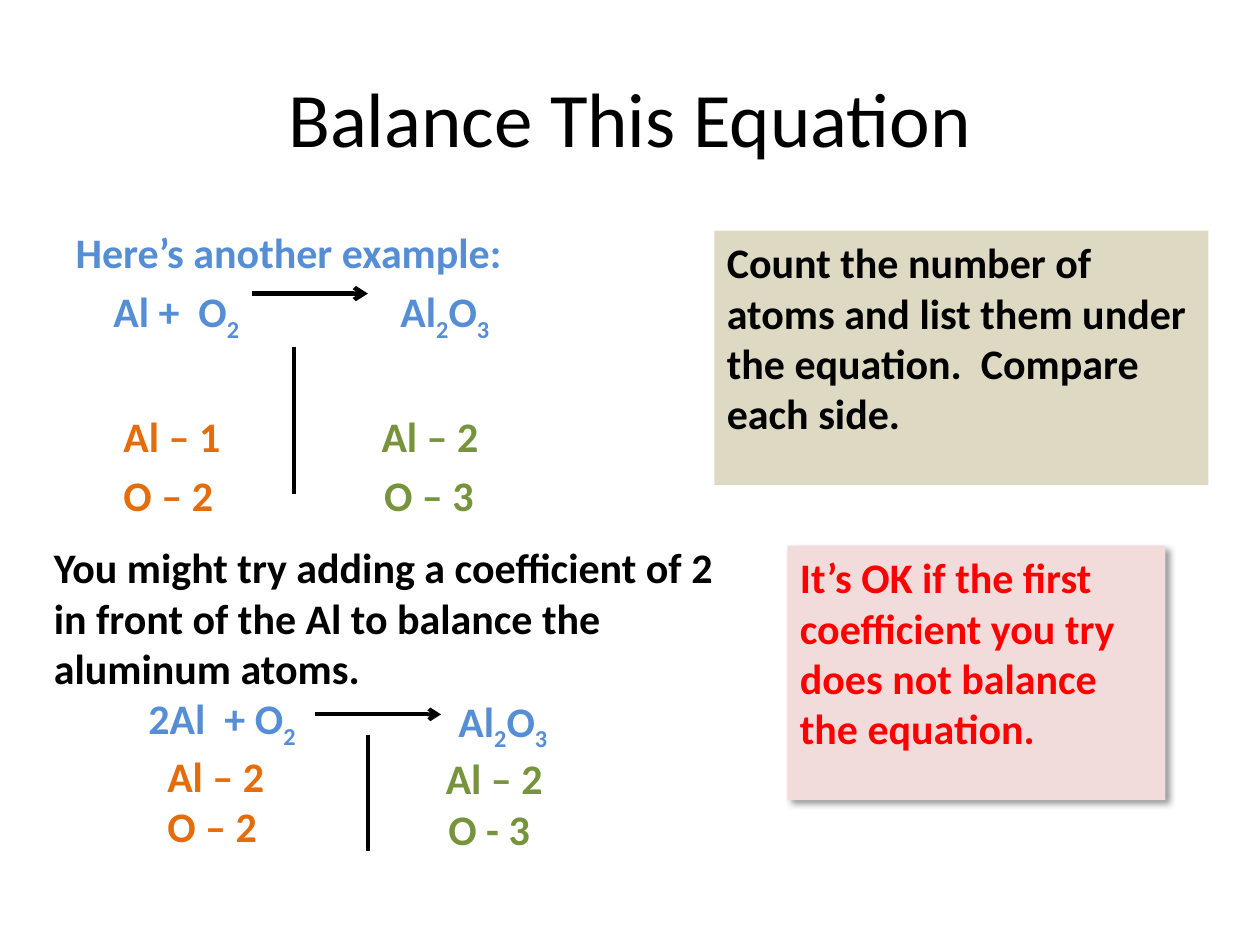
from dataclasses import dataclass

from lxml.etree import SubElement
from pptx import Presentation
from pptx.dml.color import RGBColor
from pptx.enum.shapes import MSO_CONNECTOR, MSO_SHAPE
from pptx.enum.text import MSO_ANCHOR, MSO_AUTO_SIZE, PP_ALIGN
from pptx.oxml.ns import qn
from pptx.util import Inches, Pt


@dataclass(frozen=True)
class Theme:
    font: str = "Calibri"
    title_size: int = 44
    text_size: int = 24
    black: str = "000000"
    equation: str = "558ED5"
    reactant: str = "E46C0A"
    product: str = "77933C"
    warning: str = "FF0000"
    tan: str = "DDD9C3"
    pink: str = "F2DCDB"


theme = Theme()


def style_span(span, colour, size=theme.text_size, bold=True):
    span.font.name = theme.font
    span.font.size = Pt(size)
    span.font.bold = bold
    span.font.color.rgb = RGBColor.from_string(colour)


def write_line(para, text, colour, indent, space_before):
    """Write one line; the character after "_" is a subscript."""
    properties = para._p.get_or_add_pPr()
    properties.set("marL", str(Inches(indent)))
    properties.set("indent", "0")
    SubElement(properties, qn("a:buNone"))
    para.space_before = Pt(space_before)
    first, *others = text.split("_")
    parts = [(first, False)]
    for other in others:
        parts += [(other[0], True), (other[1:], False)]
    for part, is_subscript in parts:
        if part:
            span = para.add_run()
            span.text = part
            style_span(span, colour)
            if is_subscript:
                span._r.get_or_add_rPr().set("baseline", "-25000")


deck = Presentation()
deck.slide_width, deck.slide_height = Inches(10), Inches(7.5)
page = deck.slides.add_slide(deck.slide_layouts[1])

# Title
title = page.shapes.title
title.left, title.top = Inches(0.5), Inches(0.3)
title.width, title.height = Inches(9), Inches(1.25)
title.text_frame.text = "Balance This Equation"
title.text_frame.vertical_anchor = MSO_ANCHOR.MIDDLE
title_para = title.text_frame.paragraphs[0]
title_para.alignment = PP_ALIGN.CENTER
style_span(title_para.runs[0], theme.black, theme.title_size, bold=False)

# Two attempts, each with a reactant column and a product column
body = page.placeholders[1]
body.left, body.top = Inches(0.5), Inches(1.75)
body.width, body.height = Inches(6.17), Inches(2.67)
body_products = page.shapes.add_textbox(Inches(2.93), Inches(2.22), Inches(2), Inches(2.1))
attempt = page.shapes.add_textbox(Inches(0.33), Inches(4.25), Inches(5.5), Inches(2.83))
attempt_products = page.shapes.add_textbox(Inches(3.44), Inches(5.47), Inches(2), Inches(1.6))

# Each line: text, colour, indent, space before
columns = [
    (body, [
        ("Here’s another example:", theme.equation, 0, 0),
        ("Al +  O_2", theme.equation, 0.3, 4.8),
        ("Al – 1", theme.reactant, 0.38, 38.5),
        ("O – 2", theme.reactant, 0.38, 4.8),
    ]),
    (body_products, [
        ("Al_2O_3", theme.equation, 0.15, 0),
        ("Al – 2", theme.product, 0, 38.5),
        ("O – 3", theme.product, 0.02, 4.8),
    ]),
    (attempt, [
        ("You might try adding a coefficient of 2 in front of the Al "
         "to balance the aluminum atoms.", theme.black, 0, 0),
        ("2Al  + O_2", theme.equation, 0.75, 0),
        ("Al – 2", theme.reactant, 0.9, 0),
        ("O – 2", theme.reactant, 0.9, 0),
    ]),
    (attempt_products, [
        ("Al_2O_3", theme.equation, 0.1, 0),
        ("Al – 2", theme.product, 0, 0),
        ("O - 3", theme.product, 0.02, 0),
    ]),
]
for box, lines in columns:
    frame = box.text_frame
    frame.word_wrap = True
    frame.auto_size = MSO_AUTO_SIZE.NONE
    for number, line in enumerate(lines):
        para = frame.add_paragraph() if number else frame.paragraphs[0]
        write_line(para, *line)

# Coloured notes on the right
notes = [
    (5.67, 1.83, 3.92, theme.tan, theme.black, False,
     "Count the number of atoms and list them under the equation.  Compare each side."),
    (6.25, 4.33, 3, theme.pink, theme.warning, True,
     "It’s OK if the first coefficient you try does not balance the equation."),
]
for left, top, width, fill, colour, has_shadow, text in notes:
    note = page.shapes.add_shape(
        MSO_SHAPE.RECTANGLE, Inches(left), Inches(top), Inches(width), Inches(2.02))
    note.shadow.inherit = False
    note.fill.solid()
    note.fill.fore_color.rgb = RGBColor.from_string(fill)
    note.line.fill.background()
    if has_shadow:
        effects = note._element.spPr.find(qn("a:effectLst"))
        shadow = SubElement(effects, qn("a:outerShdw"), blurRad=str(Pt(4)),
                            dist=str(Pt(3)), dir="2700000", algn="tl", rotWithShape="0")
        shade = SubElement(shadow, qn("a:srgbClr"), val=theme.black)
        SubElement(shade, qn("a:alpha"), val="40000")
    frame = note.text_frame
    frame.word_wrap = True
    frame.vertical_anchor = MSO_ANCHOR.TOP
    frame.text = text
    frame.paragraphs[0].alignment = PP_ALIGN.LEFT
    style_span(frame.paragraphs[0].runs[0], colour)

# Reaction arrows and the dividers between both sides
strokes = [
    (2, 2.33, 2.92, 2.33, 2.5, True),
    (2.33, 2.75, 2.33, 3.92, 2.25, False),
    (2.5, 5.67, 3.5, 5.67, 2.25, True),
    (2.92, 5.83, 2.92, 6.75, 2, False),
]
for x1, y1, x2, y2, weight, is_arrow in strokes:
    stroke = page.shapes.add_connector(
        MSO_CONNECTOR.STRAIGHT, Inches(x1), Inches(y1), Inches(x2), Inches(y2))
    stroke.line.color.rgb = RGBColor.from_string(theme.black)
    stroke.line.width = Pt(weight)
    if is_arrow:
        SubElement(stroke.line._get_or_add_ln(), qn("a:tailEnd"), type="arrow")
    SubElement(stroke._element.spPr, qn("a:effectLst"))

deck.save("out.pptx")
